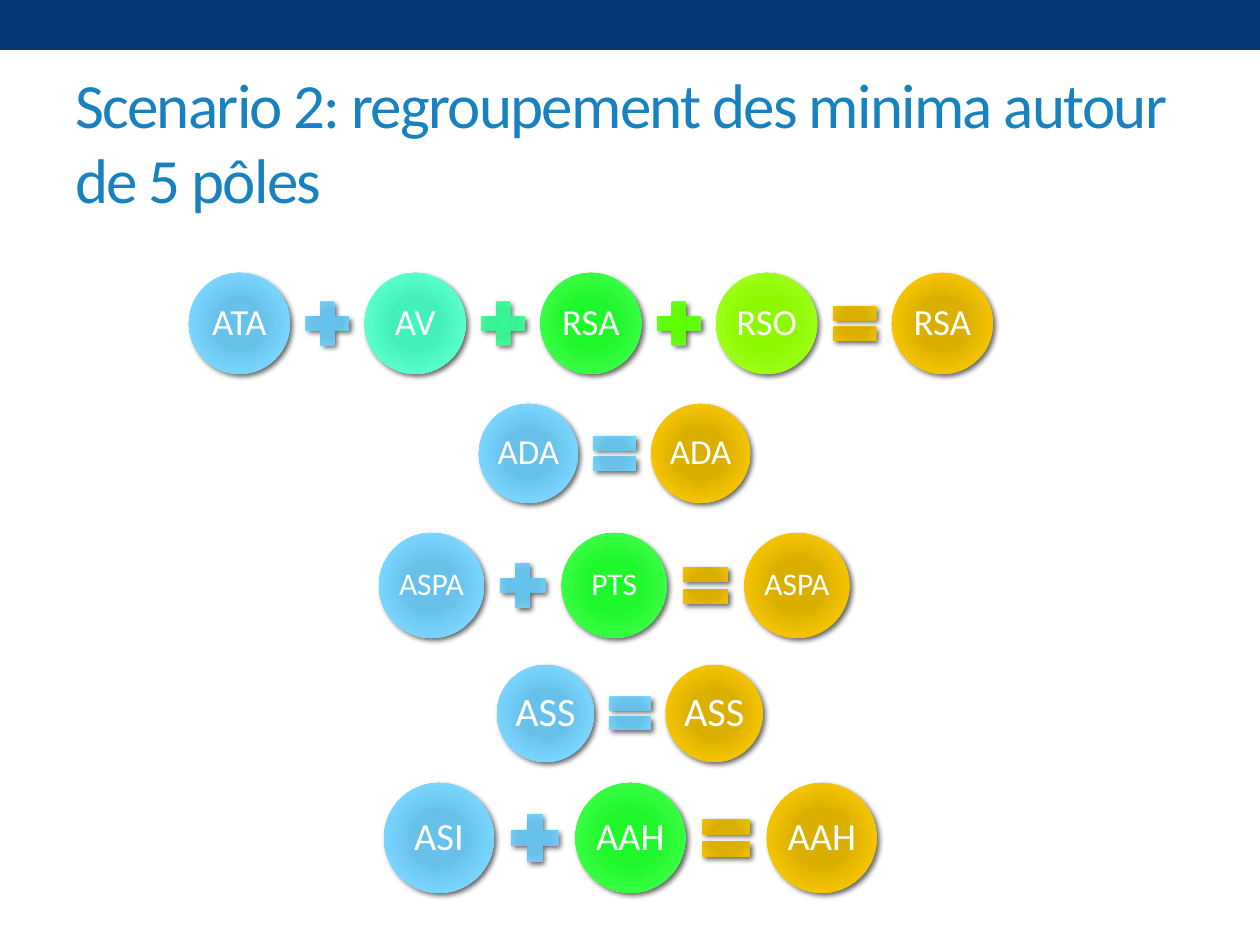
from dataclasses import dataclass, field

from lxml.etree import SubElement
from pptx import Presentation
from pptx.dml.color import RGBColor
from pptx.enum.shapes import MSO_SHAPE as Shape
from pptx.enum.text import MSO_ANCHOR as Anchor, PP_ALIGN as Align
from pptx.oxml.ns import qn
from pptx.util import Emu, Pt

STOPS = (0, 34, 70, 100)
OPERATORS = {"+": Shape.MATH_PLUS, "=": Shape.MATH_EQUAL}
OPERATOR_RATIO, GAP_RATIO = 0.58, 0.08


@dataclass(frozen=True)
class Theme:
    font: str = "Calibri"
    banner: str = "073779"
    title: str = "1782BF"
    label: str = "FFFFFF"
    shadow: str = "000000"
    title_size: int = 36
    gradients: dict = field(default_factory=lambda: {
        "blue": ("63C2EE", "68C1E9", "79D5FF", "8FD9FB"),
        "aqua": ("3EF6BC", "44F0BA", "58FFCB", "6CFBCE"),
        "mint": ("31F890", "38F291", "4DFFA2", "60FBAA"),
        "green": ("18FE25", "20F62C", "37FF42", "49FC53"),
        "lime": ("5EFF03", "5FFB07", "71FF21", "7AFD31"),
        "olive": ("8EF800", "8EF800", "9BFF16", "A0FD25"),
        "gold": ("DAAF00", "DAAF00", "F4C300", "FFCC00"),
    })


THEME = Theme()

ROWS = [
    ((189, 273, 101), 21, [("ATA", "blue"), ("+", "blue"), ("AV", "aqua"), ("+", "mint"),
                           ("RSA", "green"), ("+", "lime"), ("RSO", "olive"),
                           ("=", "gold"), ("RSA", "gold")]),
    ((479, 404, 99), 20, [("ADA", "blue"), ("=", "blue"), ("ADA", "gold")]),
    ((379, 533, 105), 18, [("ASPA", "blue"), ("+", "blue"), ("PTS", "green"),
                           ("=", "gold"), ("ASPA", "gold")]),
    ((497, 665, 97), 23, [("ASS", "blue"), ("=", "blue"), ("ASS", "gold")]),
    ((384, 783, 110), 22, [("ASI", "blue"), ("+", "blue"), ("AAH", "green"),
                           ("=", "gold"), ("AAH", "gold")]),
]


def px(length):
    return Emu(round(length * 914400 / 126))


def set_values(target, values):
    for name, value in values.items():
        setattr(target, name, value)


def write_text(frame, text, size, color, frame_format, para_format):
    set_values(frame, frame_format)
    para = frame.paragraphs[0]
    set_values(para, para_format)
    span = para.add_run()
    span.text = text
    set_values(span.font, {"name": THEME.font, "size": Pt(size)})
    span.font.color.rgb = RGBColor.from_string(color)
    return span


def add_node(parent, tag, **attributes):
    return SubElement(parent, qn(tag), {key: str(value) for key, value in attributes.items()})


def paint_radial(shape, colors):
    shape.line.fill.background()
    shape.shadow.inherit = False
    properties = shape.element.spPr
    gradient = add_node(properties, "a:gradFill", rotWithShape=1)
    stops = add_node(gradient, "a:gsLst")
    for position, color in zip(STOPS, colors):
        stop = add_node(stops, "a:gs", pos=position * 1000)
        add_node(stop, "a:srgbClr", val=color)
    focus = add_node(gradient, "a:path", path="circle")
    add_node(focus, "a:fillToRect", l=100000, t=100000, r=100000, b=100000)
    properties.find(qn("a:prstGeom")).addnext(gradient)
    shadow = add_node(properties.find(qn("a:effectLst")), "a:outerShdw",
                      blurRad=Pt(3), dist=Pt(2), dir=45 * 60000, rotWithShape=0)
    color = add_node(shadow, "a:srgbClr", val=THEME.shadow)
    add_node(color, "a:alpha", val=60000)


def add_banner(page, left, top, width, height):
    banner = page.shapes.add_shape(Shape.RECTANGLE, px(left), px(top), px(width), px(height))
    banner.shadow.inherit = False
    banner.fill.solid()
    banner.fill.fore_color.rgb = RGBColor.from_string(THEME.banner)
    banner.line.fill.background()


def add_title(page, left, top, width, height, text):
    box = page.shapes.add_textbox(px(left), px(top), px(width), px(height))
    span = write_text(box.text_frame, text, THEME.title_size, THEME.title,
                      {"word_wrap": True, "vertical_anchor": Anchor.MIDDLE},
                      {"alignment": Align.LEFT})
    span.font._element.set("spc", "-100")


def add_equation(page, left, top, diameter, size, terms):
    group = page.shapes.add_group_shape()
    inset = px(4)
    label_frame = {"word_wrap": False, "vertical_anchor": Anchor.MIDDLE,
                   "margin_left": inset, "margin_right": inset,
                   "margin_top": inset, "margin_bottom": inset}
    for text, palette in terms:
        kind = OPERATORS.get(text, Shape.OVAL)
        side = diameter * OPERATOR_RATIO if text in OPERATORS else diameter
        shape = group.shapes.add_shape(kind, px(left), px(top + (diameter - side) / 2),
                                       px(side), px(side))
        paint_radial(shape, THEME.gradients[palette])
        if text not in OPERATORS:
            write_text(shape.text_frame, text, size, THEME.label, label_frame,
                       {"alignment": Align.CENTER, "line_spacing": 0.9})
        left += side + diameter * GAP_RATIO


def main():
    deck = Presentation()
    set_values(deck, {"slide_width": px(1260), "slide_height": px(945)})
    page = deck.slides.add_slide(deck.slide_layouts[6])
    add_banner(page, 0, 0, 1260, 50)
    add_title(page, 63, 73, 1134, 136, "Scenario 2: regroupement des minima autour de 5 pôles")
    for place, size, terms in ROWS:
        add_equation(page, *place, size, terms)
    deck.save("out.pptx")


if __name__ == "__main__":
    main()
